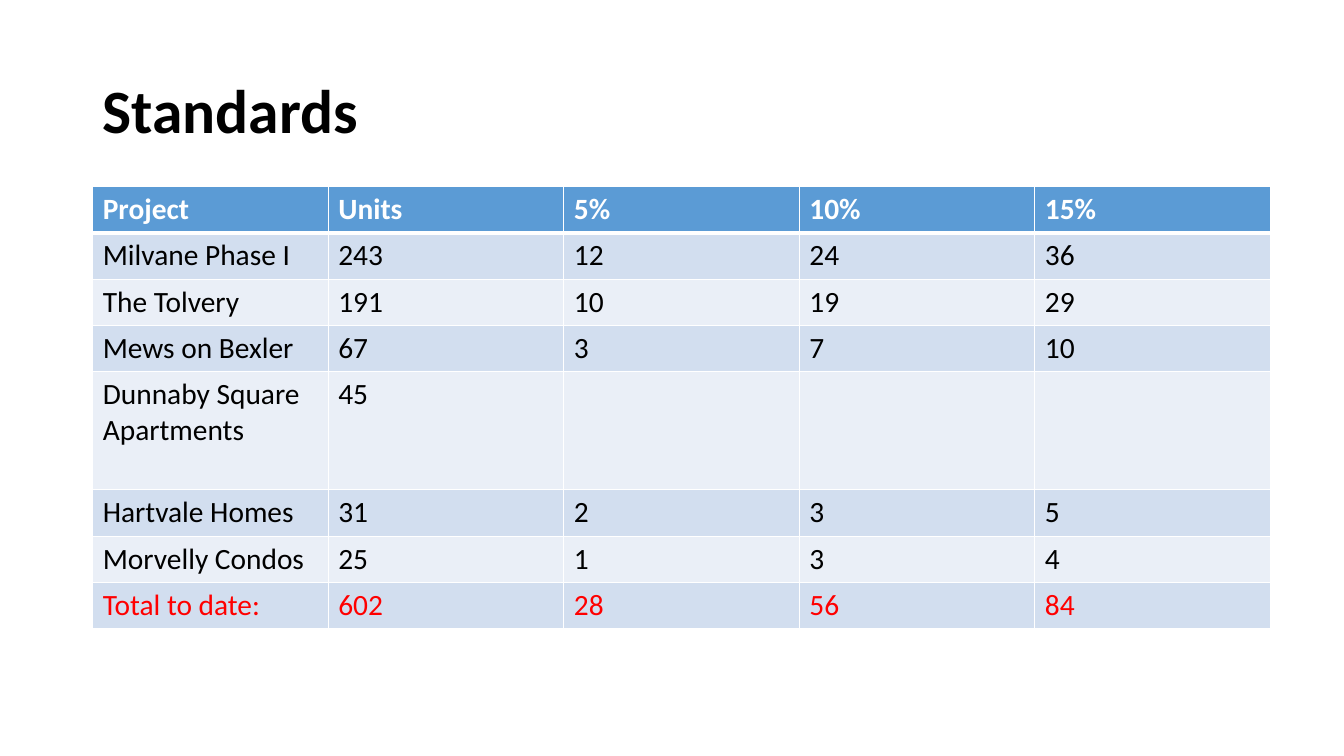
from dataclasses import dataclass

from lxml.etree import SubElement
from pptx import Presentation
from pptx.dml.color import RGBColor
from pptx.enum.text import MSO_ANCHOR
from pptx.oxml.ns import qn
from pptx.slide import Slide
from pptx.table import _Cell as Cell
from pptx.text.text import _Paragraph as Paragraph
from pptx.util import Inches, Pt

WHITE = RGBColor(0xFF, 0xFF, 0xFF)
BLACK = RGBColor(0x00, 0x00, 0x00)
RED = RGBColor(0xFF, 0x00, 0x00)
HEADER_BLUE = RGBColor(0x5B, 0x9B, 0xD5)
BAND_DARK = RGBColor(0xD2, 0xDE, 0xEF)
BAND_LIGHT = RGBColor(0xEA, 0xEF, 0xF7)

FONT = "Calibri"
LEFT = Inches(0.92)
TITLE_TOP, TITLE_WIDTH, TITLE_HEIGHT = Inches(0.4), Inches(11.5), Inches(1.45)
TABLE_TOP, TABLE_WIDTH = TITLE_TOP + TITLE_HEIGHT, Inches(11.68)
ROW_HEIGHT, TALL_ROW_HEIGHT = Inches(0.46), Inches(1.17)


@dataclass(frozen=True)
class Row:
    texts: tuple[str, ...]
    color: RGBColor = BLACK
    bold: bool = False
    height: int = ROW_HEIGHT


ROWS = (
    Row(("Project", "Units", "5%", "10%", "15%"), WHITE, bold=True),
    Row(("Milvane Phase I", "243", "12", "24", "36")),
    Row(("The Tolvery", "191", "10", "19", "29")),
    Row(("Mews on Bexler", "67", "3", "7", "10")),
    Row(("Dunnaby Square Apartments", "45", "", "", ""), height=TALL_ROW_HEIGHT),
    Row(("Hartvale Homes", "31", "2", "3", "5")),
    Row(("Morvelly Condos", "25", "1", "3", "4")),
    Row(("Total to date:", "602", "28", "56", "84"), RED),
)


def set_font(para: Paragraph, size: float, color: RGBColor, bold: bool) -> None:
    font = para.font
    font.name, font.size, font.bold = FONT, Pt(size), bold
    font.color.rgb = color


def add_borders(cell: Cell, top: float, bottom: float) -> None:
    """Draw white cell borders; side borders are one point wide."""
    properties = cell._tc.get_or_add_tcPr()
    for side, width in (("L", 1), ("R", 1), ("T", top), ("B", bottom)):
        line = SubElement(properties, qn(f"a:ln{side}"), w=str(Pt(width)))
        fill = SubElement(line, qn("a:solidFill"))
        SubElement(fill, qn("a:srgbClr"), val=str(WHITE))


def add_title(page: Slide, text: str) -> None:
    box = page.shapes.add_textbox(LEFT, TITLE_TOP, TITLE_WIDTH, TITLE_HEIGHT)
    frame = box.text_frame
    frame.word_wrap = True
    frame.vertical_anchor = MSO_ANCHOR.MIDDLE
    para = frame.paragraphs[0]
    para.text = text
    para.line_spacing = 0.9
    set_font(para, 44, BLACK, bold=True)


def row_fill(index: int) -> RGBColor:
    if index == 0:
        return HEADER_BLUE
    return BAND_DARK if index % 2 else BAND_LIGHT


def add_standards_table(page: Slide) -> None:
    column_count = len(ROWS[0].texts)
    height = sum(row.height for row in ROWS)
    table = page.shapes.add_table(
        len(ROWS), column_count, LEFT, TABLE_TOP, TABLE_WIDTH, height
    ).table
    for column in table.columns:
        column.width = TABLE_WIDTH // column_count
    for index, row in enumerate(ROWS):
        table.rows[index].height = row.height
        for cell, text in zip(table.rows[index].cells, row.texts):
            add_borders(cell, top=3 if index == 1 else 1, bottom=3 if index == 0 else 1)
            cell.fill.solid()
            cell.fill.fore_color.rgb = row_fill(index)
            para = cell.text_frame.paragraphs[0]
            para.text = text
            set_font(para, 21, row.color, row.bold)


def main() -> None:
    deck = Presentation()
    deck.slide_width, deck.slide_height = Inches(13.33), Inches(7.5)
    page = deck.slides.add_slide(deck.slide_layouts[6])
    add_title(page, "Standards")
    add_standards_table(page)
    deck.save("out.pptx")


if __name__ == "__main__":
    main()
